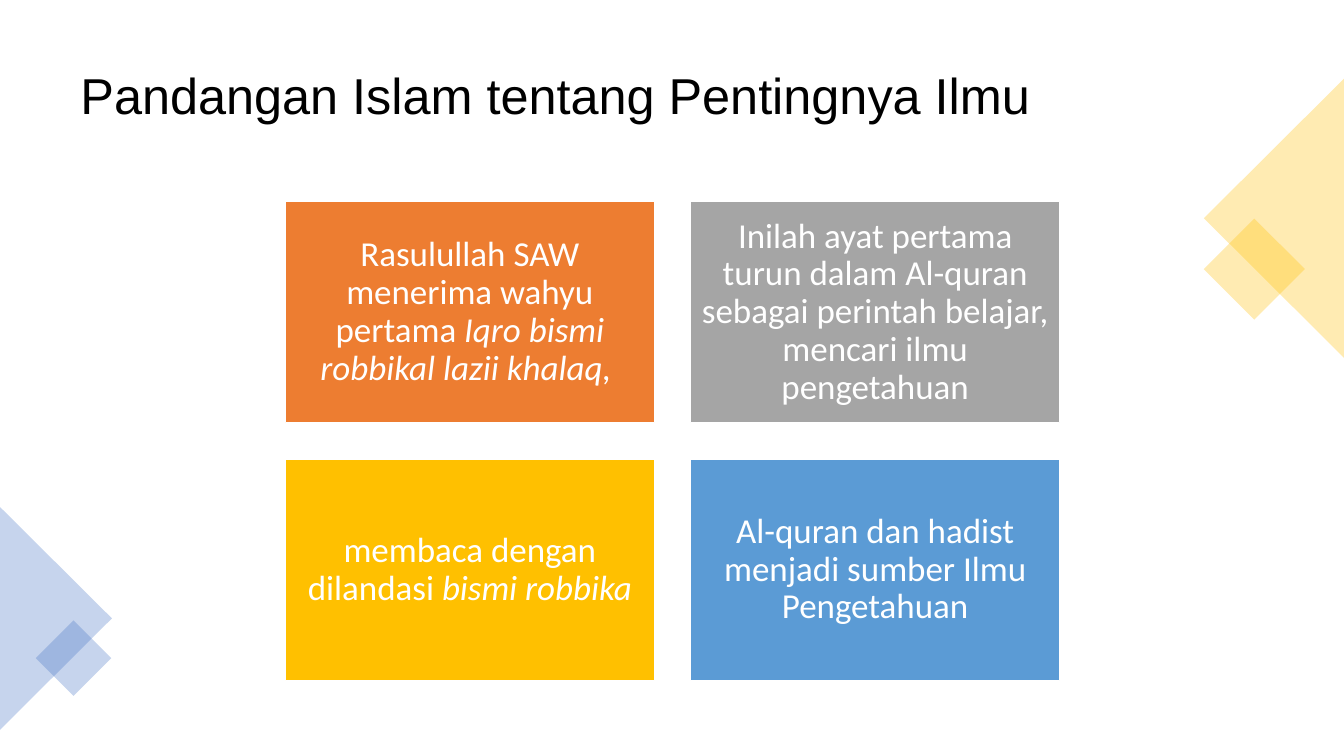
from dataclasses import dataclass

import pptx
import pptx.dml.color
import pptx.enum.shapes
import pptx.enum.text
import pptx.oxml
import pptx.oxml.ns
import pptx.util

Inches = pptx.util.Inches
Pt = pptx.util.Pt
MSO_SHAPE = pptx.enum.shapes.MSO_SHAPE
PP_ALIGN = pptx.enum.text.PP_ALIGN


@dataclass(frozen=True)
class Theme:
    title_font: str = "Arial"
    body_font: str = "Calibri"
    title_size: int = 36
    body_size: int = 25
    line_spacing: float = 0.9
    black: str = "000000"
    white: str = "FFFFFF"
    orange: str = "ED7D31"
    grey: str = "A5A5A5"
    gold: str = "FFC000"
    light_blue: str = "5B9BD5"
    blue: str = "4472C4"
    accent_alpha: int = 30


THEME = Theme()
TITLE = "Pandangan Islam tentang Pentingnya Ilmu"
# Each card: fill colour and (text, italic) runs
CARDS = [
    (THEME.orange, [("Rasulullah SAW menerima wahyu pertama ", False),
                    ("Iqro bismi robbikal lazii khalaq, ", True)]),
    (THEME.grey, [("Inilah ayat pertama turun dalam Al-quran sebagai perintah "
                   "belajar, mencari ilmu pengetahuan", False)]),
    (THEME.gold, [("membaca dengan dilandasi ", False),
                  ("bismi robbika", True)]),
    (THEME.light_blue, [("Al-quran dan hadist menjadi sumber Ilmu Pengetahuan",
                         False)]),
]


def rgb(color):
    return pptx.dml.color.RGBColor.from_string(color)


def write_text(sp, runs, font, size, color, align, margins):
    """Fill a shape with one vertically centred paragraph of (text, italic) runs."""
    tf = sp.text_frame
    tf.word_wrap = True
    tf.vertical_anchor = pptx.enum.text.MSO_ANCHOR.MIDDLE
    tf.margin_left = tf.margin_right = Inches(margins[0])
    tf.margin_top = tf.margin_bottom = Inches(margins[1])
    p = tf.paragraphs[0]
    p.alignment = align
    p.line_spacing = THEME.line_spacing
    for text, italic in runs:
        r = p.add_run()
        r.text = text
        r.font.name = font
        r.font.size = Pt(size)
        r.font.italic = italic
        r.font.color.rgb = rgb(color)


def add_filled(s, kind, box, color):
    sp = s.shapes.add_shape(kind, *map(Inches, box))
    sp.shadow.inherit = False
    sp.fill.solid()
    sp.fill.fore_color.rgb = rgb(color)
    return sp


def add_title(s, box):
    sp = s.shapes.add_textbox(*map(Inches, box))
    write_text(sp, [(TITLE, False)], THEME.title_font, THEME.title_size,
               THEME.black, PP_ALIGN.LEFT, (0.1, 0.05))


def add_accent(s, kind, center, size, angle, color):
    """Place a translucent shape, turned about its centre."""
    (x, y), (w, h) = center, size
    sp = add_filled(s, kind, (x - w / 2, y - h / 2, w, h), color)
    sp.line.fill.background()
    sp.rotation = angle
    clr = sp.fill._xPr.find(".//" + pptx.oxml.ns.qn("a:srgbClr"))
    alpha = pptx.oxml.parse_xml(
        f'<a:alpha {pptx.oxml.ns.nsdecls("a")} val="{THEME.accent_alpha * 1000}"/>')
    clr.append(alpha)


def add_edge_decoration(s, box, angle, diamond_center, diamond_side, color):
    """Draw a triangle filling the box and turned by angle, with a small diamond."""
    left, top, width, height = box
    add_accent(s, MSO_SHAPE.ISOSCELES_TRIANGLE,
               (left + width / 2, top + height / 2), (height, width), angle, color)
    add_accent(s, MSO_SHAPE.RECTANGLE, (left + diamond_center[0], top + diamond_center[1]),
               (diamond_side, diamond_side), 45, color)


def add_card_grid(s, box, gap, columns=2):
    left, top, width, height = box
    rows = len(CARDS) // columns
    w = (width - gap * (columns - 1)) / columns
    h = (height - gap * (rows - 1)) / rows
    for i, (color, runs) in enumerate(CARDS):
        row, col = divmod(i, columns)
        sp = add_filled(s, MSO_SHAPE.RECTANGLE,
                        (left + col * (w + gap), top + row * (h + gap), w, h), color)
        sp.line.color.rgb = rgb(THEME.white)
        sp.line.width = Pt(1)
        write_text(sp, runs, THEME.body_font, THEME.body_size,
                   THEME.white, PP_ALIGN.CENTER, (0.1, 0.1))


def main():
    prs = pptx.Presentation()
    prs.slide_width, prs.slide_height = Inches(13.33), Inches(7.5)
    s = prs.slides.add_slide(prs.slide_layouts[6])
    add_title(s, (0.7, 0.35, 11.93, 1.24))
    add_edge_decoration(s, (11.94, 0.78, 1.39, 2.77), 270, (0.5, 1.89), 0.71, THEME.gold)
    add_edge_decoration(s, (0, 5.03, 1.11, 2.21), 90, (0.73, 1.5), 0.53, THEME.blue)
    add_card_grid(s, (2.83, 2, 7.68, 4.75), 0.36)
    prs.save("out.pptx")


if __name__ == "__main__":
    main()
